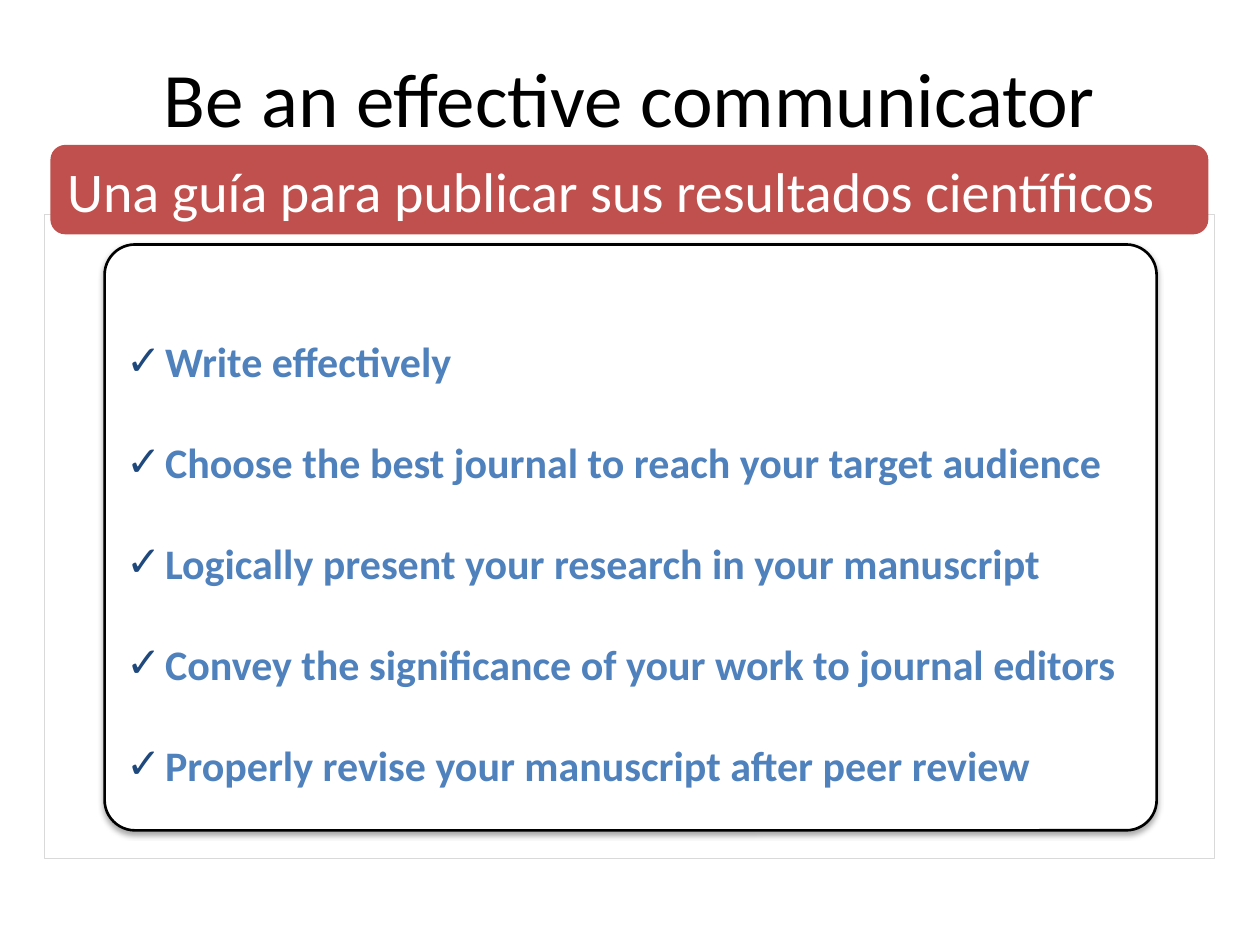
import pptx
import pptx.dml.color
import pptx.enum.shapes
import pptx.enum.text
import pptx.oxml
import pptx.oxml.ns
import pptx.util
from pptx.util import Inches

TITLE = "Be an effective communicator"
SUBTITLE = "Una guía para publicar sus resultados científicos"
TIPS = [
    "Write effectively",
    "Choose the best journal to reach your target audience",
    "Logically present your research in your manuscript",
    "Convey the significance of your work to journal editors",
    "Properly revise your manuscript after peer review",
]
BOXES = {
    "title": (0.5, 0.3, 9, 0.93),
    "panel": (0.35, 1.7, 9.29, 5.11),
    "tips": (0.83, 1.94, 8.35, 4.65),
    "banner": (0.4, 1.15, 9.19, 0.71),
}
FORMATS = {
    "title": {"size": pptx.util.Pt(44), "name": "Calibri", "bold": False},
    "tips": {"size": pptx.util.Pt(24), "name": "Calibri", "bold": True},
    "banner": {"size": pptx.util.Pt(32), "name": "Calibri", "bold": False},
}
SHAPE = pptx.enum.shapes.MSO_SHAPE
ALIGN = pptx.enum.text.PP_ALIGN
NS = pptx.oxml.ns.nsdecls("a")


def rgb(value):
    return pptx.dml.color.RGBColor.from_string(value)


def xml(text):
    """Parse one DrawingML element written without its namespace."""
    return pptx.oxml.parse_xml(text.replace(">", f" {NS}>", 1))


def place(sp, name):
    sp.left, sp.top, sp.width, sp.height = map(Inches, BOXES[name])


def paint(sp, fill, line=None, width=0):
    sp.fill.solid()
    sp.fill.fore_color.rgb = rgb(fill)
    if line:
        sp.line.color.rgb = rgb(line)
        sp.line.width = pptx.util.Pt(width)
    else:
        sp.line.fill.background()


def add_box(s, kind, name):
    sp = s.shapes.add_shape(kind, *map(Inches, BOXES[name]))
    sp.shadow.inherit = False
    return sp


def write(sp, lines, name, color, align):
    tf = sp.text_frame
    tf.word_wrap = True
    tf.auto_size = pptx.enum.text.MSO_AUTO_SIZE.NONE
    tf.vertical_anchor = pptx.enum.text.MSO_ANCHOR.MIDDLE
    for i, line in enumerate(lines):
        p = tf.add_paragraph() if i else tf.paragraphs[0]
        p.alignment = align
        r = p.add_run()
        r.text = line
        for key, value in FORMATS[name].items():
            setattr(r.font, key, value)
        r.font.color.rgb = rgb(color)


def add_check(p):
    p.line_spacing = 2.0
    p.space_before = pptx.util.Pt(0)
    pPr = p._p.get_or_add_pPr()
    pPr.set("marL", str(Inches(0.31)))
    pPr.set("indent", str(Inches(-0.31)))
    pPr.append(xml('<a:buClr><a:srgbClr val="1F497D"/></a:buClr>'))
    pPr.append(xml('<a:buFont typeface="Calibri"></a:buFont>'))
    pPr.append(xml('<a:buChar char="✓"></a:buChar>'))


def make_card(sp):
    """Give the body placeholder rounded corners, an outline and a soft shadow."""
    sp._element.spPr.append(xml(
        '<a:prstGeom prst="roundRect"><a:avLst>'
        '<a:gd name="adj" fmla="val 5200"/></a:avLst></a:prstGeom>'))
    paint(sp, "FFFFFF", "000000", 1.5)
    sp._element.spPr.append(xml(
        '<a:effectLst><a:outerShdw blurRad="39370" dist="22860" dir="5400000" '
        'rotWithShape="0"><a:srgbClr val="000000"><a:alpha val="35000"/>'
        '</a:srgbClr></a:outerShdw></a:effectLst>'))


def main():
    prs = pptx.Presentation()
    prs.slide_width, prs.slide_height = Inches(10), Inches(7.5)
    s = prs.slides.add_slide(prs.slide_layouts[1])

    place(s.shapes.title, "title")
    write(s.shapes.title, [TITLE], "title", "000000", ALIGN.CENTER)

    panel = add_box(s, SHAPE.RECTANGLE, "panel")
    paint(panel, "FFFFFF", "D9D9D9", 0.25)
    panel.fill._xPr.solidFill[0].append(xml('<a:alpha val="80000"></a:alpha>'))

    tips = s.placeholders[1]
    s.shapes._spTree.append(tips._element)  # in front of the panel
    place(tips, "tips")
    make_card(tips)
    write(tips, TIPS, "tips", "4F81BD", ALIGN.LEFT)
    for p in tips.text_frame.paragraphs:
        add_check(p)

    banner = add_box(s, SHAPE.ROUNDED_RECTANGLE, "banner")
    paint(banner, "C0504D")
    write(banner, [SUBTITLE], "banner", "FFFFFF", ALIGN.LEFT)

    prs.save("out.pptx")


if __name__ == "__main__":
    main()
